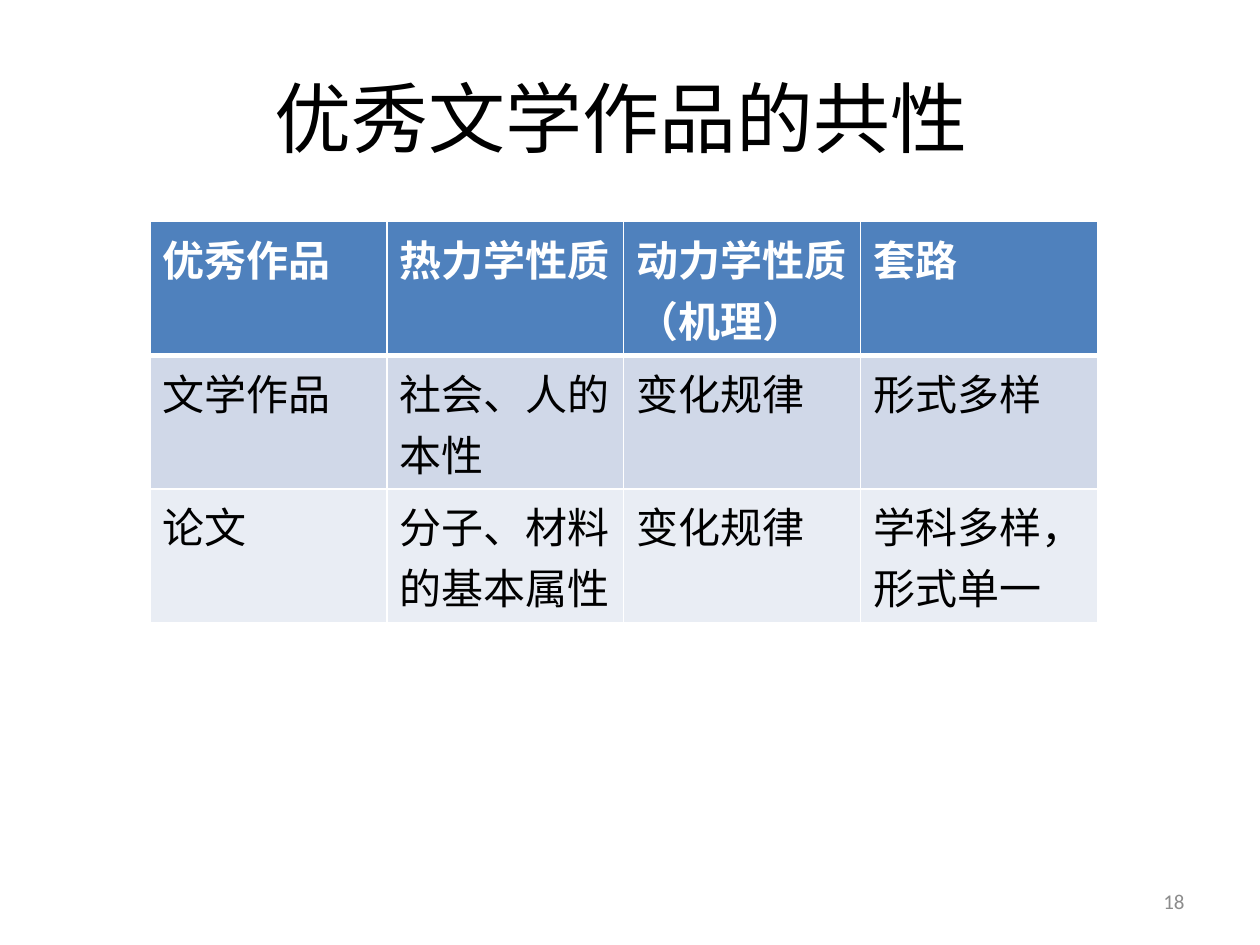
from lxml.etree import SubElement
from pptx import Presentation
from pptx.dml.color import RGBColor
from pptx.enum.text import MSO_ANCHOR, PP_ALIGN
from pptx.oxml.ns import qn
from pptx.util import Inches, Pt

TITLE = "优秀文学作品的共性 "
PAGE_NUMBER = "18"
ROWS = [
    ("优秀作品", "热力学性质", "动力学性质（机理）", "套路"),
    ("文学作品", "社会、人的本性", "变化规律", "形式多样"),
    ("论文", "分子、材料的基本属性", "变化规律", "学科多样，形式单一"),
]
COLORS = {
    "text": "000000",
    "white": "FFFFFF",
    "page": "8C8C8C",
    "header": "4F81BD",
    "odd": "D0D8E8",
    "even": "E9EDF4",
}
CHINESE_FONT = "Noto Sans CJK SC"
TABLE_LEFT, TABLE_TOP = 1.19, 1.76
COLUMN_WIDTH, ROW_HEIGHT = 1.88, 1.06


def color(name):
    return RGBColor.from_string(COLORS[name])


def add_run(paragraph, text, size, color_name, font_name=CHINESE_FONT, bold=False):
    run = paragraph.add_run()
    run.text = text
    font = run.font
    font.size, font.name, font.bold = Pt(size), font_name, bold
    font.color.rgb = color(color_name)
    # Chinese characters take their typeface from a:ea, not a:latin
    SubElement(run._r.get_or_add_rPr(), qn("a:ea"), typeface=font_name)


def add_text(slide, box, alignment, text, *style):
    shape = slide.shapes.add_textbox(*map(Inches, box))
    frame = shape.text_frame
    frame.word_wrap = True
    frame.vertical_anchor = MSO_ANCHOR.MIDDLE
    paragraph = frame.paragraphs[0]
    paragraph.alignment = alignment
    add_run(paragraph, text, *style)


def add_borders(cell, widths):
    """Draw white borders; widths maps a:ln tags to points."""
    properties = cell._tc.get_or_add_tcPr()
    for tag, width in widths.items():
        line = SubElement(properties, qn(f"a:{tag}"), w=str(Pt(width)))
        fill = SubElement(line, qn("a:solidFill"))
        SubElement(fill, qn("a:srgbClr"), val=COLORS["white"])


def add_comparison_table(slide):
    row_count, column_count = len(ROWS), len(ROWS[0])
    table = slide.shapes.add_table(
        row_count, column_count, Inches(TABLE_LEFT), Inches(TABLE_TOP),
        Inches(COLUMN_WIDTH * column_count), Inches(ROW_HEIGHT * row_count),
    ).table
    for row_index, row in enumerate(ROWS):
        is_header = row_index == 0
        fill_name = "header" if is_header else ("even", "odd")[row_index % 2]
        widths = {
            "lnL": 1,
            "lnR": 1,
            "lnT": 3 if row_index == 1 else 1,
            "lnB": 3 if is_header else 1,
        }
        for column_index, text in enumerate(row):
            cell = table.cell(row_index, column_index)
            add_borders(cell, widths)
            cell.fill.solid()
            cell.fill.fore_color.rgb = color(fill_name)
            add_run(cell.text_frame.paragraphs[0], text, 24,
                    "white" if is_header else "text", bold=is_header)


def main():
    presentation = Presentation()
    presentation.slide_width, presentation.slide_height = Inches(10), Inches(7.5)
    slide = presentation.slides.add_slide(presentation.slide_layouts[6])
    add_text(slide, (7.17, 6.95, 2.33, 0.4), PP_ALIGN.RIGHT,
             PAGE_NUMBER, 12, "page", "Calibri")
    add_text(slide, (0.5, 0.3, 9, 1.25), PP_ALIGN.CENTER, TITLE, 44, "text")
    add_comparison_table(slide)
    presentation.save("out.pptx")


if __name__ == "__main__":
    main()
